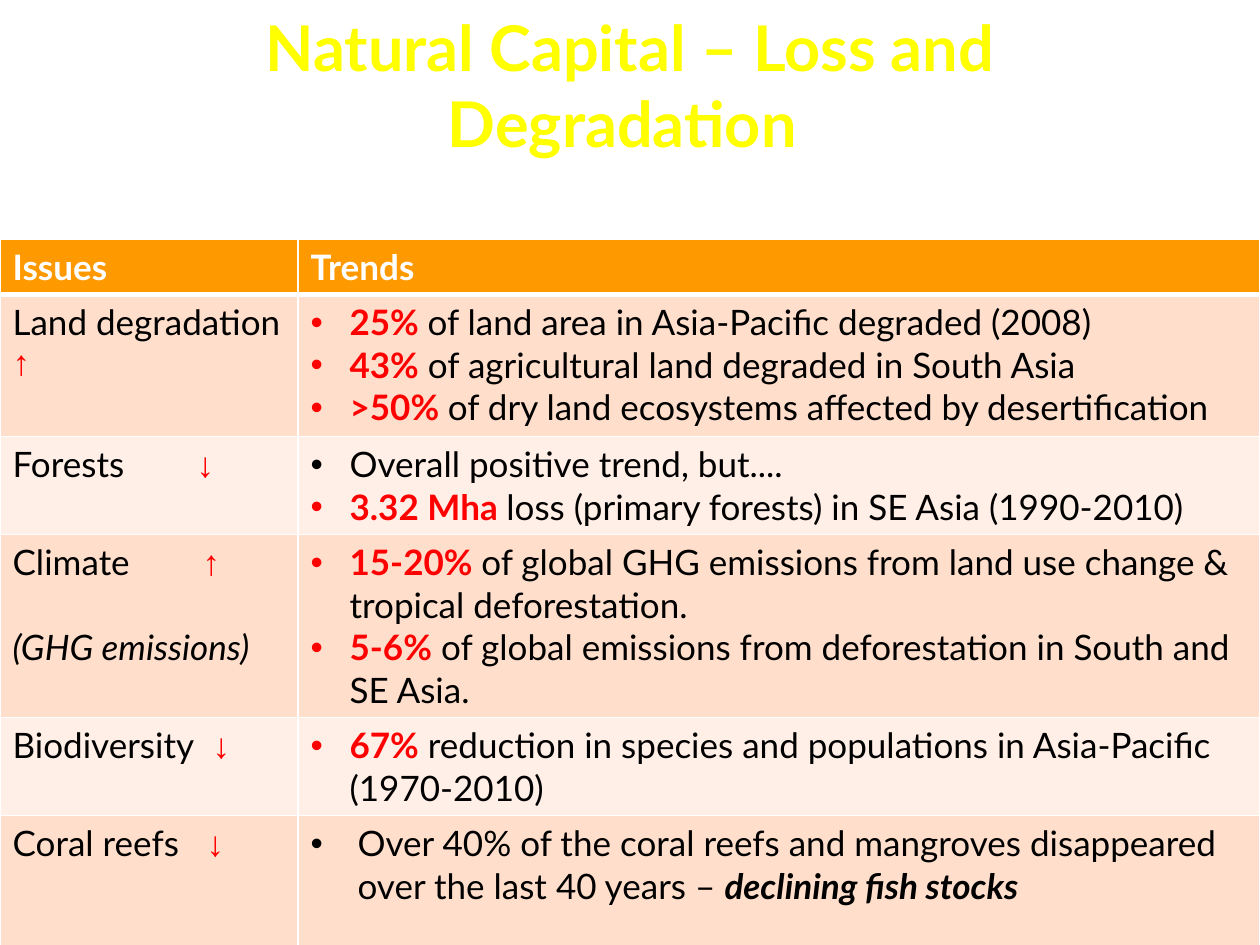
from lxml import etree
from pptx import Presentation
from pptx.dml.color import RGBColor
from pptx.enum.text import MSO_ANCHOR, MSO_AUTO_SIZE, PP_ALIGN
from pptx.oxml.ns import qn
from pptx.util import Emu, Pt

BOTTOM = MSO_ANCHOR.BOTTOM
NO_AUTOFIT = MSO_AUTO_SIZE.NONE
CENTER = PP_ALIGN.CENTER

EMU_PER_PX = 914400 / 126
THEME = {
    "font": "Lato",
    "symbol_font": "Arial",
    "title": "FFFF00",
    "header": "FF9900",
    "bands": ("FFDECB", "FFEFE7"),
    "white": "FFFFFF",
    "text": "000000",
    "accent": "FF0000",
    "title_size": 36,
    "body_size": 20,
    "thin": 0.91,
    "thick": 2.95,
}
STYLES = {
    "head": {"color": THEME["white"], "bold": True},
    "plain": {"color": THEME["text"]},
    "figure": {"color": THEME["accent"], "bold": True},
    "arrow": {"color": THEME["accent"], "bold": True, "font": THEME["symbol_font"]},
    "italic": {"color": THEME["text"], "italic": True},
    "stress": {"color": THEME["text"], "bold": True, "italic": True},
}


def px(value):
    return Emu(round(value * EMU_PER_PX))


def write_runs(paragraph, runs):
    for text, style_name in runs:
        style = STYLES[style_name]
        run = paragraph.add_run()
        run.text = text
        run.font.name = style.get("font", THEME["font"])
        run.font.size = Pt(THEME["body_size"])
        run.font.bold = style.get("bold", False)
        run.font.italic = style.get("italic", False)
        run.font.color.rgb = RGBColor.from_string(style["color"])


ROWS = [
    {"height": 54, "issue": [[("Issues", "head")]], "trends": [[("Trends", "head")]]},
    {
        "height": 142,
        "issue": [[("Land degradation ", "plain"), ("↑", "arrow")]],
        "trends": [
            [("25% ", "figure"), ("of land area in Asia-Pacific degraded (2008)", "plain")],
            [("43%", "figure"), (" of agricultural land degraded in South Asia", "plain")],
            [(">50% ", "figure"), ("of dry land ecosystems affected by desertification", "plain")],
        ],
    },
    {
        "height": 98,
        "tab": 184,
        "issue": [[("Forests\t", "plain"), ("↓", "arrow")]],
        "trends": [
            [("Overall positive trend, but....", "plain")],
            [("3.32 Mha ", "figure"), ("loss (primary forests) in SE Asia (1990-2010)", "plain")],
        ],
    },
    {
        "height": 182,
        "tab": 190,
        "issue": [[("Climate\t", "plain"), ("↑", "arrow")], [("(GHG emissions)", "italic")]],
        "trends": [
            [("15-20% ", "figure"),
             ("of global GHG emissions from land use change & tropical deforestation.", "plain")],
            [("5-6%", "figure"),
             (" of global emissions from deforestation in South and SE Asia.", "plain")],
        ],
    },
    {
        "height": 98,
        "tab": 200,
        "issue": [[("Biodiversity\t", "plain"), ("↓", "arrow")]],
        "trends": [
            [("67%", "figure"),
             (" reduction in species and populations in Asia-Pacific (1970-2010)", "plain")],
        ],
    },
    {
        "height": 180,
        "tab": 194,
        "indent": 47,
        "issue": [[("Coral reefs\t", "plain"), ("↓", "arrow")]],
        "trends": [
            [("Over 40% of the coral reefs and mangroves disappeared over the last 40 years – ", "plain"),
             ("declining fish stocks", "stress")],
        ],
    },
]
COLUMN_WIDTHS = (298, 962)

presentation = Presentation()
presentation.slide_width = px(1260)
presentation.slide_height = px(945)
slide = presentation.slides.add_slide(presentation.slide_layouts[5])

title = slide.shapes.title
title.left, title.top, title.width, title.height = px(94), px(126), px(1072), px(116)
title_frame = title.text_frame
title_frame.text = "Natural Capital – Loss and Degradation "
title_frame.word_wrap = True
title_frame.auto_size = NO_AUTOFIT
title_frame.vertical_anchor = BOTTOM
title_frame.margin_bottom = px(82)
title_paragraph = title_frame.paragraphs[0]
title_paragraph.alignment = CENTER
title_font = title_paragraph.runs[0].font
title_font.name = THEME["font"]
title_font.size = Pt(THEME["title_size"])
title_font.bold = True
title_font.color.rgb = RGBColor.from_string(THEME["title"])

table_height = sum(row["height"] for row in ROWS)
table = slide.shapes.add_table(
    len(ROWS), len(COLUMN_WIDTHS), px(0), px(239), px(sum(COLUMN_WIDTHS)), px(table_height)
).table
for column, width in zip(table.columns, COLUMN_WIDTHS):
    column.width = px(width)

for row_index, row in enumerate(ROWS):
    table.rows[row_index].height = px(row["height"])
    is_header = row_index == 0
    fill_color = THEME["header"] if is_header else THEME["bands"][(row_index - 1) % 2]
    border_widths = {
        "lnL": THEME["thin"],
        "lnR": THEME["thin"],
        "lnT": THEME["thick"] if row_index == 1 else THEME["thin"],
        "lnB": THEME["thick"] if is_header else THEME["thin"],
    }
    for column_index, key in enumerate(("issue", "trends")):
        cell = table.cell(row_index, column_index)
        cell.fill.solid()
        cell.fill.fore_color.rgb = RGBColor.from_string(fill_color)
        cell_properties = cell._tc.get_or_add_tcPr()
        for position, (side, width) in enumerate(border_widths.items()):
            border = etree.Element(qn(f"a:{side}"), w=str(Pt(width)))
            border_fill = etree.SubElement(border, qn("a:solidFill"))
            etree.SubElement(border_fill, qn("a:srgbClr"), val=THEME["white"])
            cell_properties.insert(position, border)

        for paragraph_index, runs in enumerate(row[key]):
            text_frame = cell.text_frame
            paragraph = text_frame.add_paragraph() if paragraph_index else text_frame.paragraphs[0]
            properties = paragraph._p.get_or_add_pPr()
            if key == "trends" and not is_header:
                indent = px(row.get("indent", 39))
                properties.set("marL", str(indent))
                properties.set("indent", str(-indent))
                bullet_color = etree.SubElement(properties, qn("a:buClr"))
                etree.SubElement(bullet_color, qn("a:srgbClr"), val=STYLES[runs[0][1]]["color"])
                etree.SubElement(properties, qn("a:buFont"), typeface=THEME["symbol_font"])
                etree.SubElement(properties, qn("a:buChar"), char="•")
            elif "tab" in row:
                tabs = etree.SubElement(properties, qn("a:tabLst"))
                etree.SubElement(tabs, qn("a:tab"), pos=str(px(row["tab"])), algn="l")
            paragraph.line_spacing = 1.01
            if key == "issue" and paragraph_index:
                paragraph.space_before = Pt(24)
            write_runs(paragraph, runs)

presentation.save("out.pptx")
